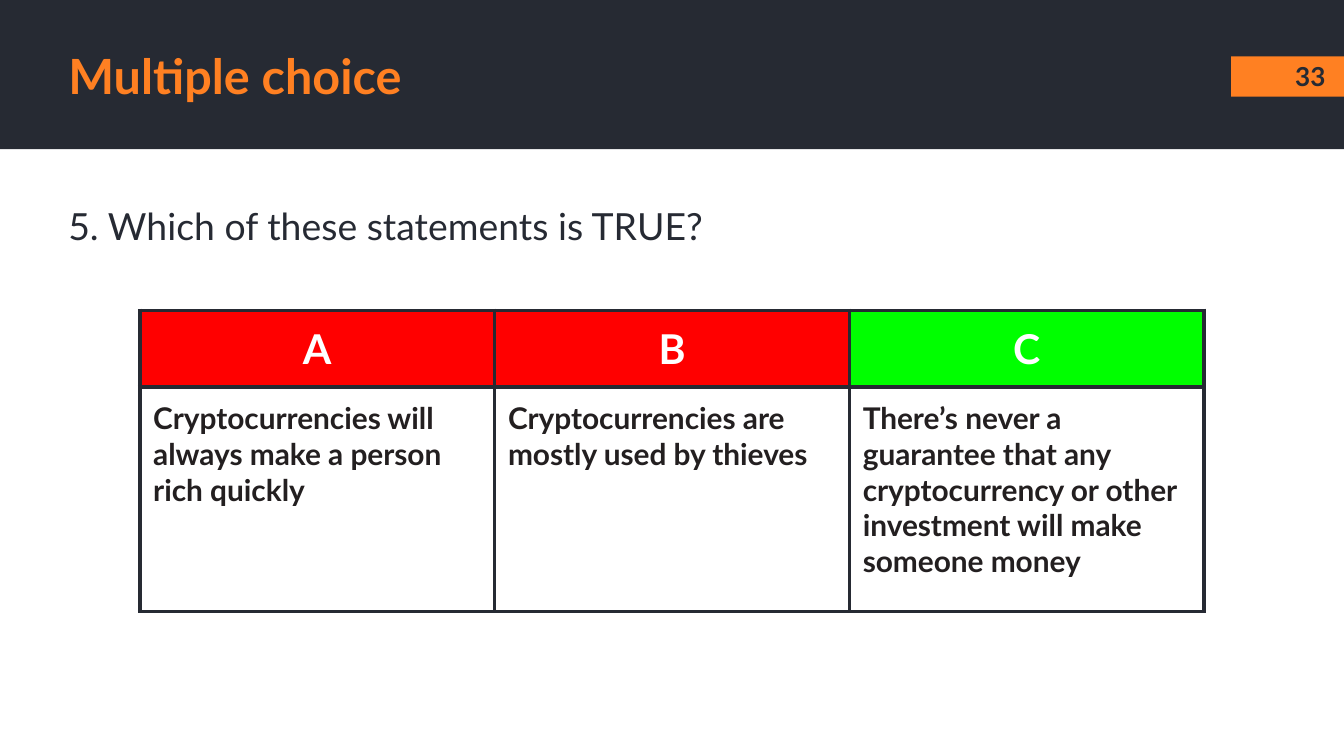
import lxml.etree
import pptx
import pptx.dml.color
import pptx.enum.shapes
import pptx.enum.text
import pptx.oxml.ns
import pptx.util

WIDTH = 10
HEIGHT = WIDTH * 9 / 16
DARK, ORANGE, WHITE, INK = "262A33", "FF8022", "FFFFFF", "231F20"
RED, GREEN = "FF0000", "00FF00"
ALIGN = pptx.enum.text.PP_ALIGN
ANCHOR = pptx.enum.text.MSO_ANCHOR
CHOICES = [
    ("A", RED, "Cryptocurrencies will always make a person rich quickly"),
    ("B", RED, "Cryptocurrencies are mostly used by thieves"),
    ("C", GREEN, "There’s never a guarantee that any cryptocurrency or other "
                 "investment will make someone money"),
]


def color(value):
    return pptx.dml.color.RGBColor.from_string(value)


def inches(*values):
    return [pptx.util.Inches(v) for v in values]


def paint(fill, value):
    fill.solid()
    fill.fore_color.rgb = color(value)


def write(tf, text, size, value, bold=False, align=ALIGN.LEFT):
    tf.word_wrap = True
    tf.text = text
    p = tf.paragraphs[0]
    p.alignment = align
    font = p.runs[0].font
    font.name = "Lato"
    font.size = pptx.util.Pt(size)
    font.bold = bold
    font.color.rgb = color(value)


def set_margins(box):
    margin = pptx.util.Inches(0.1)
    box.margin_left = box.margin_right = margin
    box.margin_top = box.margin_bottom = margin


def add_bar(s, x, y, w, h, value):
    sp = s.shapes.add_shape(pptx.enum.shapes.MSO_SHAPE.RECTANGLE,
                            *inches(x, y, w, h))
    sp.shadow.inherit = False
    sp.line.fill.background()
    paint(sp.fill, value)


def add_text(s, x, y, w, h, text, size, value, bold=False,
             align=ALIGN.LEFT, anchor=ANCHOR.MIDDLE):
    tf = s.shapes.add_textbox(*inches(x, y, w, h)).text_frame
    set_margins(tf)
    tf.vertical_anchor = anchor
    write(tf, text, size, value, bold, align)


def add_borders(cell, value, points):
    qn = pptx.oxml.ns.qn
    tc_pr = cell._tc.get_or_add_tcPr()
    for i, side in enumerate(("lnL", "lnR", "lnT", "lnB")):
        ln = lxml.etree.Element(qn(f"a:{side}"), w=str(pptx.util.Pt(points)))
        fill = lxml.etree.SubElement(ln, qn("a:solidFill"))
        lxml.etree.SubElement(fill, qn("a:srgbClr"), val=value)
        tc_pr.insert(i, ln)


def fill_cell(cell, text, size, value, fill, align):
    set_margins(cell)
    write(cell.text_frame, text, size, value, True, align)
    if fill:
        paint(cell.fill, fill)
    else:
        cell.fill.background()
    add_borders(cell, DARK, 2.25)


def add_choices(s, x, y, col_width, row_heights):
    cols = len(CHOICES)
    table = s.shapes.add_table(
        len(row_heights), cols,
        *inches(x, y, col_width * cols, sum(row_heights))).table
    table.first_row = table.horz_banding = False
    for row, height in zip(table.rows, row_heights):
        row.height = pptx.util.Inches(height)
    for i, (letter, fill, answer) in enumerate(CHOICES):
        table.columns[i].width = pptx.util.Inches(col_width)
        fill_cell(table.cell(0, i), letter, 22, WHITE, fill, ALIGN.CENTER)
        fill_cell(table.cell(1, i), answer, 16, INK, None, ALIGN.LEFT)


def main():
    prs = pptx.Presentation()
    prs.slide_width, prs.slide_height = inches(WIDTH, HEIGHT)
    s = prs.slides.add_slide(prs.slide_layouts[6])
    left = 0.41
    band = 1.11
    tab_width = 0.84
    add_bar(s, 0, 0, WIDTH, band, DARK)
    add_bar(s, WIDTH - tab_width, 0.42, tab_width, 0.3, ORANGE)
    add_text(s, 9.49, 0.44, 0.52, 0.25, "33", 14, DARK, True, ALIGN.CENTER)
    col_width = 2.64
    table_left = (WIDTH - col_width * len(CHOICES)) / 2
    add_choices(s, table_left, 2.31, col_width, [0.57, 1.67])
    add_text(s, left, band + 0.3, 8.38, 1.28,
             "5. Which of these statements is TRUE?", 20, DARK,
             anchor=ANCHOR.TOP)
    add_text(s, left, 0.28, 8.74, 0.56, "Multiple choice", 26, ORANGE, True)
    prs.save("out.pptx")


if __name__ == "__main__":
    main()
